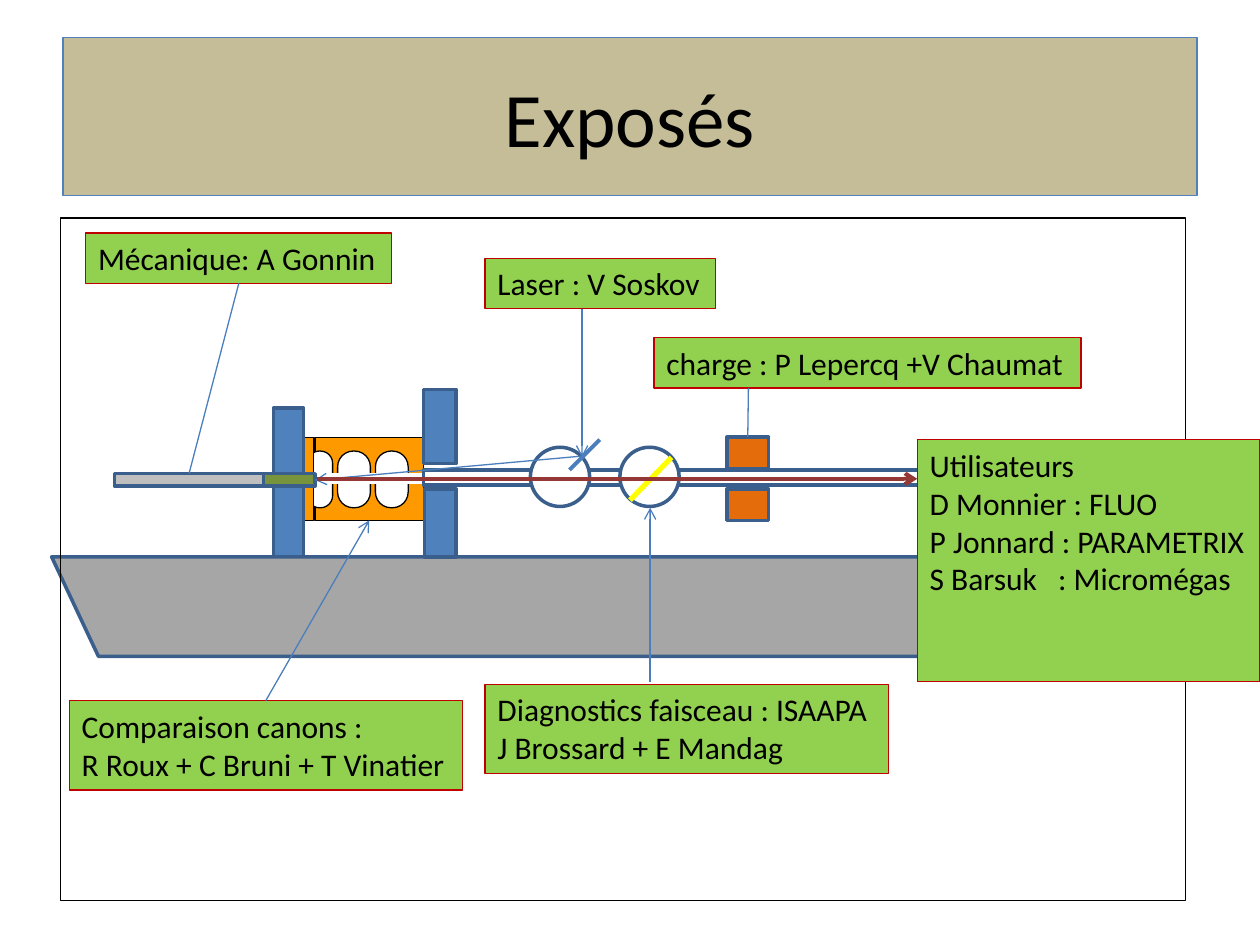
from lxml import etree
from pptx import Presentation
from pptx import util as u
from pptx.dml import color
from pptx.enum import shapes, text
from pptx.oxml import ns

BLACK = color.RGBColor(0x00, 0x00, 0x00)
WHITE = color.RGBColor(0xFF, 0xFF, 0xFF)
SAND = color.RGBColor(0xC4, 0xBD, 0x97)
BLUE = color.RGBColor(0x4F, 0x81, 0xBD)
DARK_BLUE = color.RGBColor(0x3A, 0x5F, 0x8C)
LINK_BLUE = color.RGBColor(0x4B, 0x7E, 0xBC)
ORANGE = color.RGBColor(0xFF, 0x99, 0x00)
RUST = color.RGBColor(0xE4, 0x6C, 0x0A)
GREY = color.RGBColor(0xA6, 0xA6, 0xA6)
SILVER = color.RGBColor(0xBF, 0xBF, 0xBF)
OLIVE = color.RGBColor(0x77, 0x93, 0x3C)
YELLOW = color.RGBColor(0xFF, 0xFF, 0x00)
MAROON = color.RGBColor(0x95, 0x37, 0x35)
LIME = color.RGBColor(0x92, 0xD0, 0x50)
RED = color.RGBColor(0xC0, 0x00, 0x00)

RECT = shapes.MSO_SHAPE.RECTANGLE
OVAL = shapes.MSO_SHAPE.OVAL
ROUND = shapes.MSO_SHAPE.ROUNDED_RECTANGLE
TRAPEZOID = shapes.MSO_SHAPE.TRAPEZOID
TOP, LEFT, BOTTOM, RIGHT = range(4)


class Slide:
    font = {"name": "Calibri", "size": u.Pt(18)}

    def __init__(self, prs):
        self.s = prs.slides.add_slide(prs.slide_layouts[5])

    def paint(self, sp, fill, line, width):
        if fill is None:
            sp.fill.background()
        else:
            sp.fill.solid()
            sp.fill.fore_color.rgb = fill
        sp.line.color.rgb = line
        sp.line.width = u.Pt(width)

    def add_words(self, p, words, **changes):
        r = p.add_run()
        r.text = words
        r.font.color.rgb = BLACK
        for name, value in {**self.font, **changes}.items():
            setattr(r.font, name, value)

    def title(self, box, words):
        sp = self.s.shapes.title
        for name, value in zip(("left", "top", "width", "height"), box):
            setattr(sp, name, u.Inches(value))
        self.paint(sp, SAND, BLUE, 0.75)
        tf = sp.text_frame
        tf.vertical_anchor = text.MSO_ANCHOR.MIDDLE
        tf.paragraphs[0].alignment = text.PP_ALIGN.CENTER
        self.add_words(tf.paragraphs[0], words, size=u.Pt(44))

    def shape(self, kind, box, fill, line=DARK_BLUE, width=2, adj=None, parent=None):
        sp = (parent or self.s).shapes.add_shape(kind, *map(u.Inches, box))
        sp.shadow.inherit = False
        self.paint(sp, fill, line, width)
        if adj is not None:
            sp.adjustments[0] = adj
        return sp

    def label(self, box, lines, wrap=False, fit=True, tab=None):
        sp = self.s.shapes.add_textbox(*map(u.Inches, box))
        self.paint(sp, LIME, RED, 0.75)
        tf = sp.text_frame
        tf.word_wrap = wrap
        sizes = text.MSO_AUTO_SIZE
        tf.auto_size = sizes.SHAPE_TO_FIT_TEXT if fit else sizes.NONE
        for i, words in enumerate(lines):
            p = tf.add_paragraph() if i else tf.paragraphs[0]
            self.add_words(p, words)
            if tab and "\t" in words:
                stops = etree.SubElement(p._p.get_or_add_pPr(), ns.qn("a:tabLst"))
                etree.SubElement(stops, ns.qn("a:tab"), pos=str(u.Inches(tab)), algn="l")
        return sp

    def line(self, start, end, rgb=LINK_BLUE, width=0.75, arrow=False, begin=None, finish=None):
        c = self.s.shapes.add_connector(
            shapes.MSO_CONNECTOR.STRAIGHT, *map(u.Inches, (*start, *end)))
        c.line.color.rgb = rgb
        c.line.width = u.Pt(width)
        if arrow:
            etree.SubElement(c.line._get_or_add_ln(), ns.qn("a:tailEnd"), type="arrow")
        etree.SubElement(c._element.spPr, ns.qn("a:effectLst"))
        if begin:
            c.begin_connect(*begin)
        if finish:
            c.end_connect(*finish)


def draw_gun(page):
    gun = page.s.shapes.add_group_shape()
    thin = {"line": BLACK, "width": 0.75, "parent": gun}
    body = page.shape(RECT, (2.5, 3.47, 0.86, 0.66), ORANGE, **thin)
    for left, width in ((2.68, 0.26), (2.98, 0.26), (2.44, 0.2)):
        page.shape(ROUND, (left, 3.58, width, 0.45), WHITE, adj=0.48, **thin)
    page.shape(RECT, (2.4, 3.47, 0.09, 0.66), ORANGE, **thin)
    page.shape(RECT, (2.54, 3.76, 0.91, 0.08), WHITE, **{**thin, "line": WHITE})
    return body


def main():
    prs = Presentation()
    prs.slide_width, prs.slide_height = u.Inches(10), u.Inches(7.5)
    page = Slide(prs)
    page.title((0.5, 0.3, 9, 1.25), "Exposés")

    gun = draw_gun(page)
    page.shape(RECT, (3.36, 3.73, 4.79, 0.12), WHITE)
    page.shape(RECT, (2.17, 3.24, 0.24, 1.18), BLUE)
    page.shape(RECT, (3.36, 3.09, 0.26, 0.59), BLUE)
    table = page.shape(TRAPEZOID, (0.41, 4.42, 7.74, 0.79), GREY, adj=0.47)
    table.rotation = 180
    for left in (4.92, 4.21):
        page.shape(OVAL, (left, 3.55, 0.47, 0.47), WHITE)
    magnet, _ = [page.shape(RECT, (5.77, top, 0.33, 0.25), RUST) for top in (3.47, 3.88)]
    page.shape(RECT, (3.37, 3.88, 0.25, 0.54), BLUE)
    cathode = page.shape(RECT, (2.09, 3.76, 0.41, 0.1), OLIVE)
    rod = page.shape(RECT, (0.91, 3.76, 1.18, 0.1), SILVER)

    page.line((4.76, 3.49), (4.52, 3.73), width=2.25)
    page.line((5.33, 3.63), (5, 3.97), YELLOW, 3)
    page.line((4.62, 2.45), (4.62, 3.63), arrow=True)
    page.line((4.62, 3.62), (2.5, 3.81), arrow=True, finish=(cathode, RIGHT))
    page.line((2.52, 3.8), (7.28, 3.8), MAROON, 2.25, arrow=True)

    page.label((3.85, 2.05, 1.83, 0.4), ["Laser : V Soskov"])
    page.label((5.19, 2.68, 3.39, 0.4), ["charge : P Lepercq +V Chaumat"])
    guns = page.label((0.55, 5.56, 3.12, 0.71),
                      ["Comparaison canons :", "R Roux + C Bruni + T Vinatier"])
    mechanics = page.label((0.68, 1.85, 2.43, 0.4), ["Mécanique: A Gonnin"])
    page.label((3.85, 5.43, 3.2, 0.71),
               ["Diagnostics faisceau : ISAAPA", "J Brossard + E Mandag"], wrap=True)

    page.line((5.94, 3.08), (5.94, 3.47), finish=(magnet, TOP))
    page.line((1.9, 2.25), (1.5, 3.76), begin=(mechanics, BOTTOM), finish=(rod, TOP))
    page.line((2.11, 5.56), (2.93, 4.13), arrow=True, begin=(guns, TOP), finish=(gun, BOTTOM))
    page.line((5.16, 5.41), (5.16, 4.03), arrow=True)

    page.shape(RECT, (0.48, 1.73, 8.93, 5.42), None, BLACK, 0.75)
    page.label((7.28, 3.49, 2.72, 1.92),
               ["Utilisateurs", "D Monnier : FLUO", "P Jonnard : PARAMETRIX",
                "S Barsuk\t: Micromégas"], wrap=True, fit=False, tab=1.02)
    prs.save("out.pptx")


if __name__ == "__main__":
    main()
